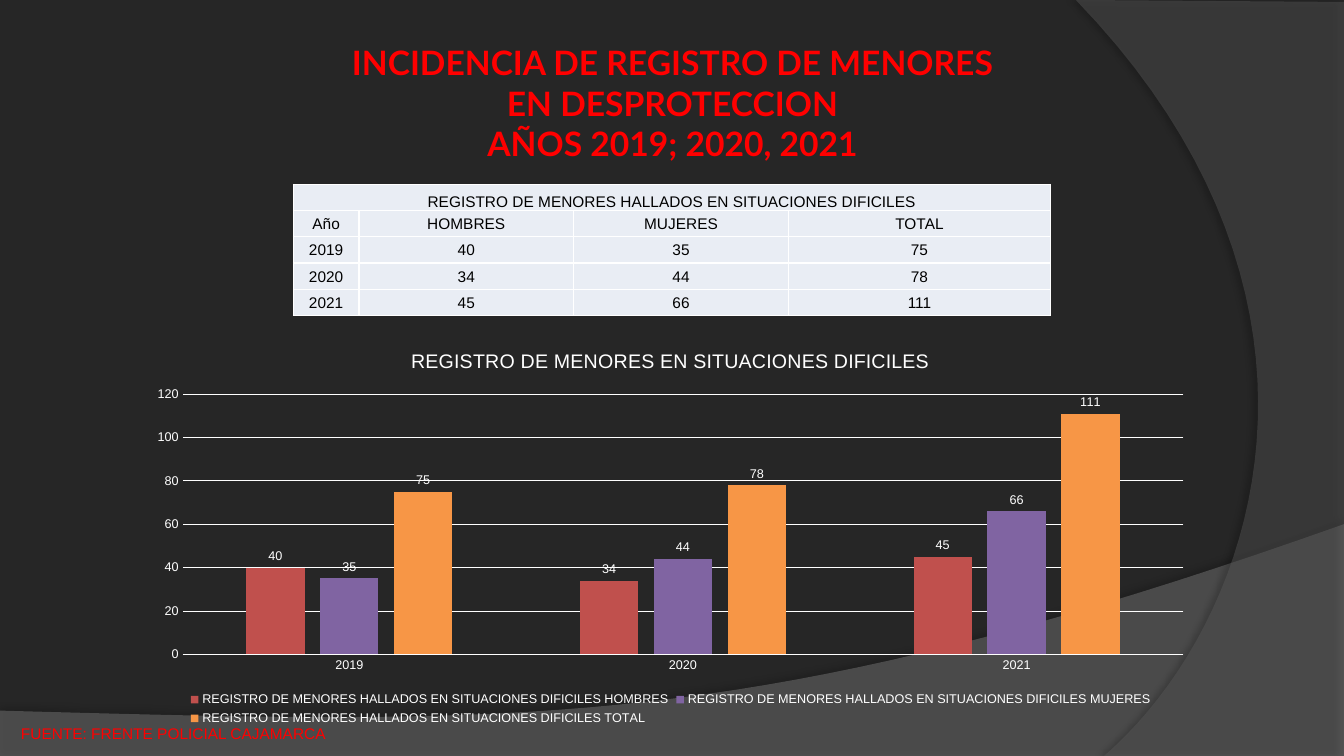
import pptx
import pptx.util
import pptx.chart.data
import pptx.dml.color
import pptx.enum.chart
import pptx.enum.text
import pptx.oxml
import pptx.oxml.ns
from lxml import etree

Inches, Pt = pptx.util.Inches, pptx.util.Pt
CENTER = pptx.enum.text.PP_ALIGN.CENTER
ANCHOR = pptx.enum.text.MSO_ANCHOR
XL = pptx.enum.chart

HEAD = ["INCIDENCIA DE REGISTRO DE MENORES EN DESPROTECCION", "AÑOS 2019; 2020, 2021"]
SOURCE = ["FUENTE: FRENTE POLICIAL CAJAMARCA"]
GROUP = "REGISTRO DE MENORES HALLADOS EN SITUACIONES DIFICILES"
TITLE = "REGISTRO DE MENORES EN SITUACIONES DIFICILES"
YEARS = ["2019", "2020", "2021"]
SERIES = [
    ("HOMBRES", [40, 34, 45], "C0504D"),
    ("MUJERES", [35, 44, 66], "8064A2"),
    ("TOTAL", [75, 78, 111], "F79646"),
]
WIDTHS = [0.65, 2.13, 2.13, 2.6]
ROW = 0.26
WAVE = {
    "start": (13.33, 5.2),
    "curves": [((7.45, 7.29), (5.21, 7.19), (0, 7.05))],
    "lines": [(0, 7.51), (13.33, 7.51)],
    "fill": ("7F7F7F", 45),
    "shadow": (35, 4, 3.5, 270),
}
ARC = {
    "start": (10.95, 7.5),
    "curves": [((12.46, 6.19), (13.57, 3), (10.67, 0))],
    "lines": [(13.33, 0.02), (13.33, 7.5)],
    "fill": ("5E5E5E", 40),
    "shadow": (45, 4, 4, 180),
}


def paint(fmt, hue):
    if hasattr(fmt, "solid"):
        fmt.solid()
        fmt = fmt.fore_color
    else:
        fmt = fmt.color
    fmt.rgb = pptx.dml.color.RGBColor.from_string(hue)


def style(font, size, hue, name="Arial", bold=False):
    font.size, font.name, font.bold = Pt(size), name, bold
    paint(font, hue)


def bezier(start, one, two, end, steps=40):
    for i in range(1, steps + 1):
        t = i / steps
        s = 1 - t
        yield tuple(
            s**3 * a + 3 * s * s * t * b + 3 * s * t * t * c + t**3 * d
            for a, b, c, d in zip(start, one, two, end)
        )


def swoosh(part):
    pts = []
    for curve in part["curves"]:
        pts += bezier(part["start"], *curve)
    pts += part["lines"]
    pen = slide.shapes.build_freeform(*map(Inches, part["start"]), scale=1.0)
    pen.add_line_segments([(Inches(x), Inches(y)) for x, y in pts], close=True)
    shape = pen.convert_to_shape()
    hue, alpha = part["fill"]
    paint(shape.fill, hue)
    shape.line.fill.background()
    shape.shadow.inherit = False
    props = shape._element.spPr
    tint = props.find(".//" + pptx.oxml.ns.qn("a:srgbClr"))
    etree.SubElement(tint, pptx.oxml.ns.qn("a:alpha"), val=str(alpha * 1000))
    dark, blur, dist, turn = part["shadow"]
    props.find(pptx.oxml.ns.qn("a:effectLst")).append(pptx.oxml.parse_xml(
        f'<a:outerShdw {pptx.oxml.ns.nsdecls("a")} blurRad="{Pt(blur)}" dist="{Pt(dist)}" '
        f'dir="{turn * 60000}" rotWithShape="0"><a:srgbClr val="000000">'
        f'<a:alpha val="{dark * 1000}"/></a:srgbClr></a:outerShdw>'))


def words(box, lines, size, name, bold, align=None):
    frame = slide.shapes.add_textbox(*map(Inches, box)).text_frame
    frame.word_wrap = True
    for i, line in enumerate(lines):
        para = frame.add_paragraph() if i else frame.paragraphs[0]
        para.text, para.alignment = line, align
        style(para.font, size, "FF0000", name, bold)


def fill_cell(cell, text, anchor):
    cell.margin_left = cell.margin_right = cell.margin_top = Inches(0.01)
    cell.margin_bottom = 0
    cell.vertical_anchor = anchor
    props = cell._tc.get_or_add_tcPr()
    for side in "LRTB":
        props.append(pptx.oxml.parse_xml(
            f'<a:ln{side} {pptx.oxml.ns.nsdecls("a")} w="{Pt(1)}"><a:solidFill>'
            f'<a:srgbClr val="FFFFFF"/></a:solidFill></a:ln{side}>'))
    paint(cell.fill, "E9EDF4")
    para = cell.text_frame.paragraphs[0]
    para.text, para.alignment = text, CENTER
    style(para.font, 11, "000000")


def add_grid():
    rows = [[GROUP, "", "", ""], ["Año"] + [s[0] for s in SERIES]]
    rows += [[year] + [str(s[1][i]) for s in SERIES] for i, year in enumerate(YEARS)]
    table = slide.shapes.add_table(
        len(rows), len(WIDTHS), Inches(2.91), Inches(1.83),
        Inches(sum(WIDTHS)), Inches(ROW * len(rows))).table
    for col, width in zip(table.columns, WIDTHS):
        col.width = Inches(width)
    for r, row in enumerate(rows):
        table.rows[r].height = Inches(ROW)
        for c, text in enumerate(row):
            fill_cell(table.cell(r, c), text, ANCHOR.MIDDLE if r else ANCHOR.BOTTOM)
    table.cell(0, 0).merge(table.cell(0, len(WIDTHS) - 1))


def add_bars():
    data = pptx.chart.data.CategoryChartData()
    data.categories = YEARS
    for name, vals, hue in SERIES:
        data.add_series(f"{GROUP} {name}", vals)
    chart = slide.shapes.add_chart(
        XL.XL_CHART_TYPE.COLUMN_CLUSTERED, Inches(1.35), Inches(3.29),
        Inches(10.6), Inches(3.95), data).chart
    style(chart.font, 10, "FFFFFF")
    chart.has_title = True
    head = chart.chart_title.text_frame.paragraphs[0]
    head.text = TITLE
    style(head.font, 14, "FFFFFF")
    chart.has_legend = True
    chart.legend.position = XL.XL_LEGEND_POSITION.BOTTOM
    chart.legend.include_in_layout = False
    style(chart.legend.font, 9, "FFFFFF")
    years, count = chart.category_axis, chart.value_axis
    for axis in (years, count):
        axis.major_tick_mark = axis.minor_tick_mark = XL.XL_TICK_MARK.NONE
        style(axis.tick_labels.font, 9, "FFFFFF")
    count.format.line.fill.background()
    for line in (years.format.line, count.major_gridlines.format.line):
        paint(line, "FFFFFF")
        line.width = Pt(0.75)
    plot = chart.plots[0]
    plot.gap_width, plot.overlap, plot.vary_by_categories = 219, -27, False
    for bars, (name, vals, hue) in zip(plot.series, SERIES):
        paint(bars.format.fill, hue)
        tags = bars.data_labels
        tags.show_value = True
        tags.position = XL.XL_LABEL_POSITION.OUTSIDE_END
        style(tags.font, 9, "FFFFFF")


deck = pptx.Presentation()
deck.slide_width, deck.slide_height = Inches(13.33), Inches(7.5)
slide = deck.slides.add_slide(deck.slide_layouts[6])
paint(slide.background.fill, "262626")
for part in (WAVE, ARC):
    swoosh(part)
add_grid()
words((3.17, 0.37, 7, 1.31), HEAD, 24, "Lato", True, CENTER)
add_bars()
words((0.11, 7.13, 3.26, 0.29), SOURCE, 11, "Arial", False)
deck.save("out.pptx")
